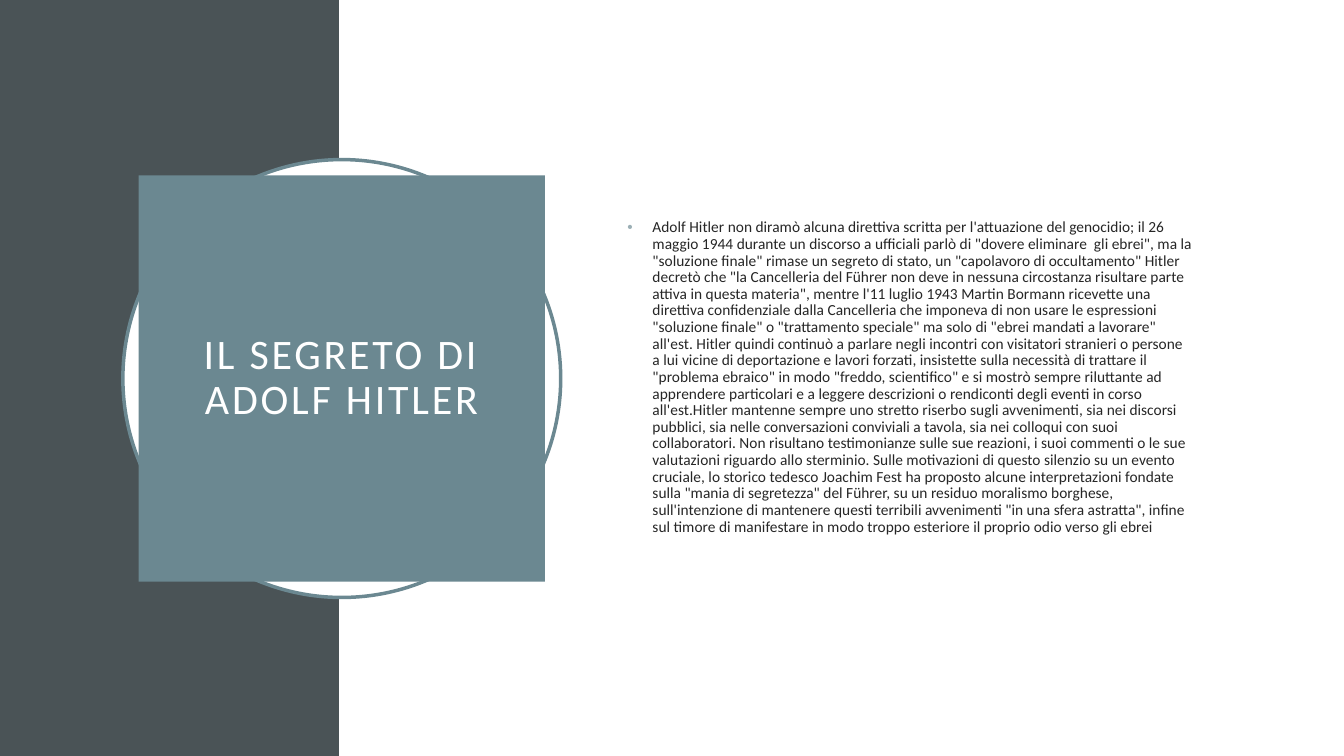
import dataclasses

import lxml.etree
import pptx
import pptx.dml.color
import pptx.enum.shapes
import pptx.enum.text
import pptx.oxml.ns
import pptx.util

PX = 9525
WIDE, HIGH = 1280, 720
SIDE = 323
HEAD = "IL SEGRETO DI ADOLF HITLER"
STORY = (
    "Adolf Hitler non diramò alcuna direttiva scritta per l'attuazione del genocidio; "
    'il 26 maggio 1944 durante un discorso a ufficiali parlò di "dovere eliminare  gli ebrei", '
    'ma la "soluzione finale" rimase un segreto di stato, un "capolavoro di occultamento" '
    'Hitler decretò che "la Cancelleria del Führer non deve in nessuna circostanza risultare '
    "parte attiva in questa materia\", mentre l'11 luglio 1943 Martin Bormann ricevette una "
    "direttiva confidenziale dalla Cancelleria che imponeva di non usare le espressioni "
    '"soluzione finale" o "trattamento speciale" ma solo di "ebrei mandati a lavorare" '
    "all'est.",
    "Hitler quindi continuò a parlare negli incontri con visitatori stranieri o "
    "persone a lui vicine di deportazione e lavori forzati, insistette sulla necessità di "
    'trattare il "problema ebraico" in modo "freddo, scientifico" e si mostrò sempre '
    "riluttante ad apprendere particolari e a leggere descrizioni o rendiconti degli eventi "
    "in corso all'est.Hitler mantenne sempre uno stretto riserbo sugli avvenimenti, sia nei "
    "discorsi pubblici, sia nelle conversazioni conviviali a tavola, sia nei colloqui con "
    "suoi collaboratori.",
    "Non risultano testimonianze sulle sue reazioni, i suoi commenti o "
    "le sue valutazioni riguardo allo sterminio. Sulle motivazioni di questo silenzio su un "
    "evento cruciale, lo storico tedesco Joachim Fest ha proposto alcune interpretazioni "
    'fondate sulla "mania di segretezza" del Führer, su un residuo moralismo borghese, '
    "sull'intenzione di mantenere questi terribili avvenimenti \"in una sfera astratta\", "
    "infine sul timore di manifestare in modo troppo esteriore il proprio odio verso gli ebrei",
)


@dataclasses.dataclass(frozen=True)
class Theme:
    """Colours, font and type sizes of the slide."""
    dark: str = "4A5356"
    teal: str = "6B8891"
    pale: str = "9BAFB5"
    white: str = "FFFFFF"
    ink: str = "262626"
    font: str = "Calibri"
    head: int = 30
    body: int = 11
    ring: float = 2.5


THEME = Theme()


def color(code):
    """Turn a hex code into a colour."""
    return pptx.dml.color.RGBColor.from_string(code)


def paint(shape, fill):
    """Give a shape a solid fill."""
    shape.fill.solid()
    shape.fill.fore_color.rgb = color(fill)


def add_form(slide, kind, box, fill, line=None):
    """Add a filled preset shape, outlined if a line colour is given."""
    shape = slide.shapes.add_shape(kind, *(n * PX for n in box))
    shape.shadow.inherit = False
    paint(shape, fill)
    if line:
        shape.line.color.rgb = color(line)
        shape.line.width = pptx.util.Pt(THEME.ring)
    else:
        shape.line.fill.background()


def set_text(shape, text, size, ink):
    """Write one middle-anchored paragraph and return it."""
    frame = shape.text_frame
    frame.text = text
    frame.word_wrap = True
    frame.auto_size = pptx.enum.text.MSO_AUTO_SIZE.NONE
    frame.vertical_anchor = pptx.enum.text.MSO_ANCHOR.MIDDLE
    para = frame.paragraphs[0]
    para.line_spacing = 0.9
    font = para.runs[0].font
    font.name = THEME.font
    font.size = pptx.util.Pt(size)
    font.color.rgb = color(ink)
    return para


def add_title(slide, box, pad):
    """Format the title placeholder as a square panel in front."""
    title = slide.shapes.title
    title.left, title.top, title.width, title.height = (n * PX for n in box)
    paint(title, THEME.teal)
    para = set_text(title, HEAD, THEME.head, THEME.white)
    para.alignment = pptx.enum.text.PP_ALIGN.CENTER
    para.runs[0].font._element.set("spc", "200")
    frame = title.text_frame
    frame.margin_left = frame.margin_right = pad * PX
    frame.margin_top = frame.margin_bottom = pad * PX
    slide.shapes.element.append(title.element)


def add_bullet(para, code, indent):
    """Give a paragraph a coloured bullet with a hanging indent."""
    name = pptx.oxml.ns.qn
    props = para._p.get_or_add_pPr()
    props.set("marL", str(indent * PX))
    props.set("indent", str(-indent * PX))
    tint = lxml.etree.SubElement(props, name("a:buClr"))
    lxml.etree.SubElement(tint, name("a:srgbClr"), val=code)
    lxml.etree.SubElement(props, name("a:buFont"), typeface="Arial")
    lxml.etree.SubElement(props, name("a:buChar"), char="•")


def add_story(slide, box):
    """Add the bulleted body text."""
    shape = slide.shapes.add_textbox(*(n * PX for n in box))
    para = set_text(shape, " ".join(STORY), THEME.body, THEME.ink)
    add_bullet(para, THEME.pale, 24)


def main():
    """Build and save the slide."""
    deck = pptx.Presentation()
    deck.slide_width, deck.slide_height = WIDE * PX, HIGH * PX
    slide = deck.slides.add_slide(deck.slide_layouts[5])
    kinds = pptx.enum.shapes.MSO_SHAPE
    add_form(slide, kinds.RECTANGLE, (0, 0, SIDE, HIGH), THEME.dark)
    add_form(slide, kinds.RECTANGLE, (SIDE, 0, WIDE - SIDE, HIGH), THEME.white)
    add_form(slide, kinds.OVAL, (117, 152, 417, 417), THEME.white, THEME.teal)
    add_title(slide, (132, 167, 387, 387), 19)
    add_story(slide, (588, 147, 559, 425))
    deck.save("out.pptx")


if __name__ == "__main__":
    main()
